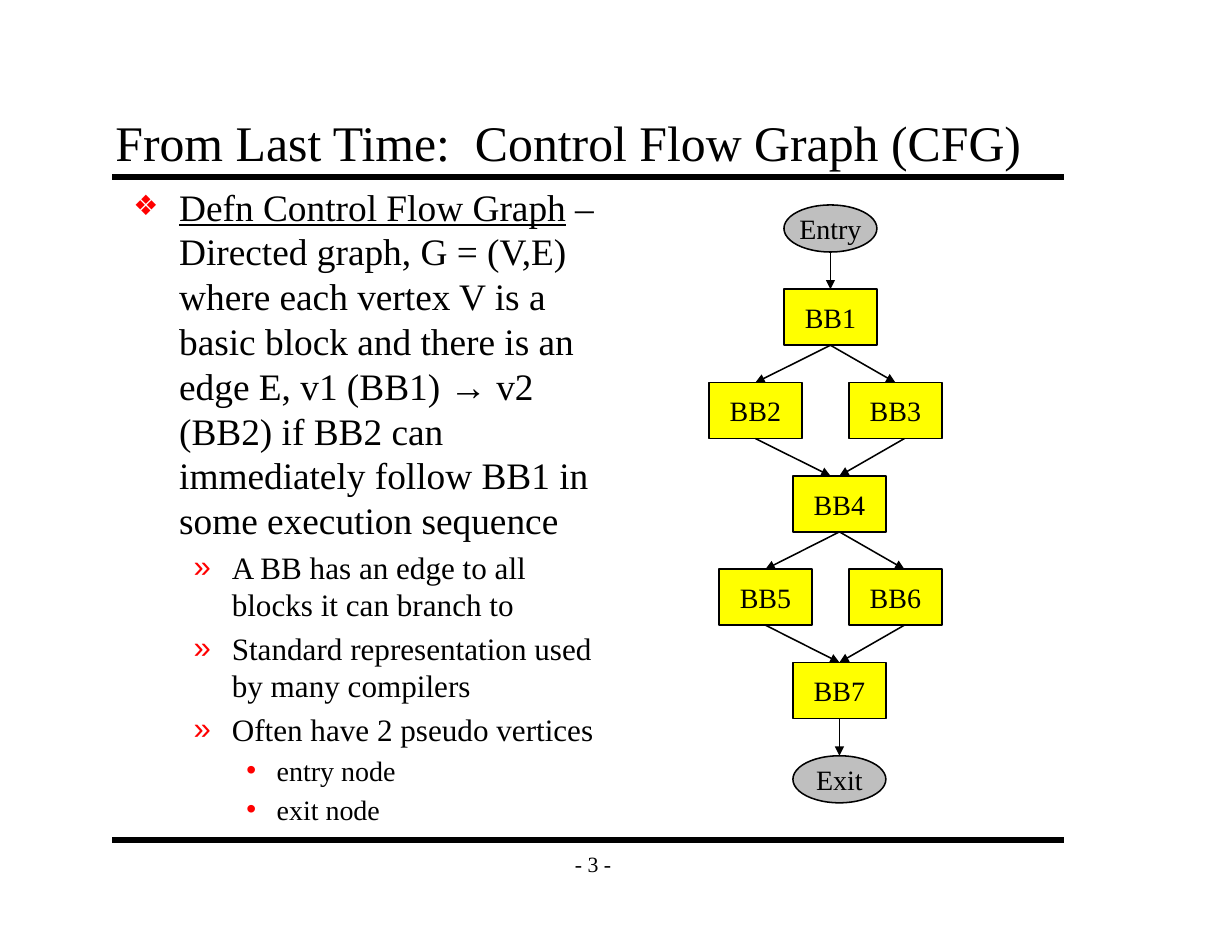
from pptx import Presentation
from pptx.dml.color import RGBColor
from pptx.enum.shapes import MSO_CONNECTOR as Connector, MSO_SHAPE as Shape
from pptx.enum.text import MSO_ANCHOR as Anchor, MSO_AUTO_SIZE as AutoSize, PP_ALIGN as Align
from pptx.oxml.ns import qn
from pptx.util import Inches, Pt
from lxml.etree import SubElement

BLACK = RGBColor(0x00, 0x00, 0x00)
YELLOW = RGBColor(0xFF, 0xFF, 0x00)
GRAY = RGBColor(0xBF, 0xBF, 0xBF)
RED = RGBColor(0xFF, 0x00, 0x00)
FONT = "Times New Roman"

TITLE = "From Last Time:  Control Flow Graph (CFG)"
PAGE_NUMBER = "- 3 -"
TERM = "Defn Control Flow Graph"
DEFINITION = (" – Directed graph, G = (V,E) where each vertex V is a basic block and "
              "there is an edge E, v1 (BB1) → v2 (BB2) if BB2 can immediately follow "
              "BB1 in some execution sequence")
OUTLINE = [
    (0, [(TERM, True), (DEFINITION, False)]),
    (1, [("A BB has an edge to all blocks it can branch to", False)]),
    (1, [("Standard representation used by many compilers", False)]),
    (1, [("Often have 2 pseudo vertices", False)]),
    (2, [("entry node", False)]),
    (2, [("exit node", False)]),
]
LEVELS = [
    {"size": 24, "left": 0.41, "hang": 0.41, "bullet": "❖", "percent": 75},
    {"size": 20, "left": 0.88, "hang": 0.34, "bullet": "»", "percent": 100},
    {"size": 18, "left": 1.28, "hang": 0.27, "bullet": "•", "percent": 100},
]

NODE_WIDTH, BLOCK_HEIGHT, OVAL_HEIGHT, GAP = 0.83, 0.5, 0.42, 0.333
GRAPH_TOP = 1.83
ROWS = [
    [("Entry", 7.0)],
    [("BB1", 7.0)],
    [("BB2", 6.33), ("BB3", 7.58)],
    [("BB4", 7.08)],
    [("BB5", 6.42), ("BB6", 7.58)],
    [("BB7", 7.08)],
    [("Exit", 7.08)],
]
SHIFT = 0.08
EDGES = [
    ("Entry", "BB1", 0, 0),
    ("BB1", "BB2", 0, 0),
    ("BB1", "BB3", 0, 0),
    ("BB2", "BB4", 0, -SHIFT),
    ("BB3", "BB4", SHIFT, 0),
    ("BB4", "BB5", 0, 0),
    ("BB4", "BB6", 0, SHIFT),
    ("BB5", "BB7", 0, 0),
    ("BB6", "BB7", SHIFT, 0),
    ("BB7", "Exit", 0, 0),
]
RULES = [1.58, 7.5]
TOP, BOTTOM = 0, 2


def add_span(para, text, size, underline=None):
    span = para.add_run()
    span.text = text
    for name, value in {"name": FONT, "size": Pt(size), "underline": underline}.items():
        setattr(span.font, name, value)
    span.font.color.rgb = BLACK


def format_frame(frame, anchor, wrap):
    settings = {"auto_size": AutoSize.NONE, "vertical_anchor": anchor, "word_wrap": wrap,
                "margin_left": Inches(0.11), "margin_right": Inches(0.11),
                "margin_top": Inches(0.06), "margin_bottom": Inches(0.06)}
    for name, value in settings.items():
        setattr(frame, name, value)


def place(box, left, top, width, height):
    for name, value in zip(("left", "top", "width", "height"), (left, top, width, height)):
        setattr(box, name, Inches(value))


def set_bullet(para, level):
    props = para._p.get_or_add_pPr()
    props.set("marL", str(Inches(level["left"])))
    props.set("indent", str(-Inches(level["hang"])))
    SubElement(SubElement(props, qn("a:buClr")), qn("a:srgbClr"), val=str(RED))
    SubElement(props, qn("a:buSzPct"), val=str(level["percent"] * 1000))
    SubElement(props, qn("a:buChar"), char=level["bullet"])


def add_line(page, start, end, weight, arrow=False):
    points = [Inches(value) for value in (*start, *end)]
    line = page.shapes.add_connector(Connector.STRAIGHT, *points)
    line.line.color.rgb = BLACK
    line.line.width = Pt(weight)
    if arrow:
        SubElement(line.line._get_or_add_ln(), qn("a:tailEnd"), type="triangle", w="med", len="med")
    SubElement(line._element.spPr, qn("a:effectLst"))
    return line


def add_node(page, label, left, top):
    is_block = label.startswith("BB")
    height = BLOCK_HEIGHT if is_block else OVAL_HEIGHT
    node = page.shapes.add_shape(Shape.RECTANGLE if is_block else Shape.OVAL,
                                 Inches(left), Inches(top), Inches(NODE_WIDTH), Inches(height))
    node.shadow.inherit = False
    node.fill.solid()
    node.fill.fore_color.rgb = YELLOW if is_block else GRAY
    node.line.color.rgb = BLACK
    node.line.width = Pt(1)
    format_frame(node.text_frame, Anchor.MIDDLE, False)
    para = node.text_frame.paragraphs[0]
    para.alignment = Align.CENTER
    add_span(para, label, 18)
    return node, left + NODE_WIDTH / 2, top, top + height


def add_graph(page):
    nodes = {}
    top = GRAPH_TOP
    for row in ROWS:
        for label, left in row:
            nodes[label] = add_node(page, label, left, top)
        top = nodes[row[0][0]][3] + GAP
    for source, target, start_shift, end_shift in EDGES:
        source_box, source_x, _, source_bottom = nodes[source]
        target_box, target_x, target_top, _ = nodes[target]
        edge = add_line(page, (source_x + start_shift, source_bottom),
                        (target_x + end_shift, target_top), 1, arrow=True)
        if source.startswith("BB") and not start_shift:
            edge.begin_connect(source_box, BOTTOM)
        if target.startswith("BB") and not end_shift:
            edge.end_connect(target_box, TOP)


def main():
    deck = Presentation()
    deck.slide_width, deck.slide_height = Inches(11), Inches(8.5)
    page = deck.slides.add_slide(deck.slide_layouts[1])

    for height in RULES:
        add_line(page, (1, height), (9.5, height), 4)

    title = page.shapes.title
    place(title, 0.92, 0.92, 8.5, 0.67)
    format_frame(title.text_frame, Anchor.BOTTOM, True)
    title.text_frame.paragraphs[0].alignment = Align.LEFT
    add_span(title.text_frame.paragraphs[0], TITLE, 32)

    body = page.placeholders[1]
    place(body, 1.08, 1.58, 4.42, 5.7)
    format_frame(body.text_frame, Anchor.TOP, True)
    for index, (depth, spans) in enumerate(OUTLINE):
        para = body.text_frame.add_paragraph() if index else body.text_frame.paragraphs[0]
        para.level = depth
        set_bullet(para, LEVELS[depth])
        for text, underline in spans:
            add_span(para, text, LEVELS[depth]["size"], underline)

    number = page.shapes.add_textbox(Inches(4.92), Inches(7.5), Inches(0.75), Inches(0.42))
    format_frame(number.text_frame, Anchor.MIDDLE, False)
    number.text_frame.paragraphs[0].alignment = Align.CENTER
    add_span(number.text_frame.paragraphs[0], PAGE_NUMBER, 14)

    add_graph(page)
    deck.save("out.pptx")


if __name__ == "__main__":
    main()
